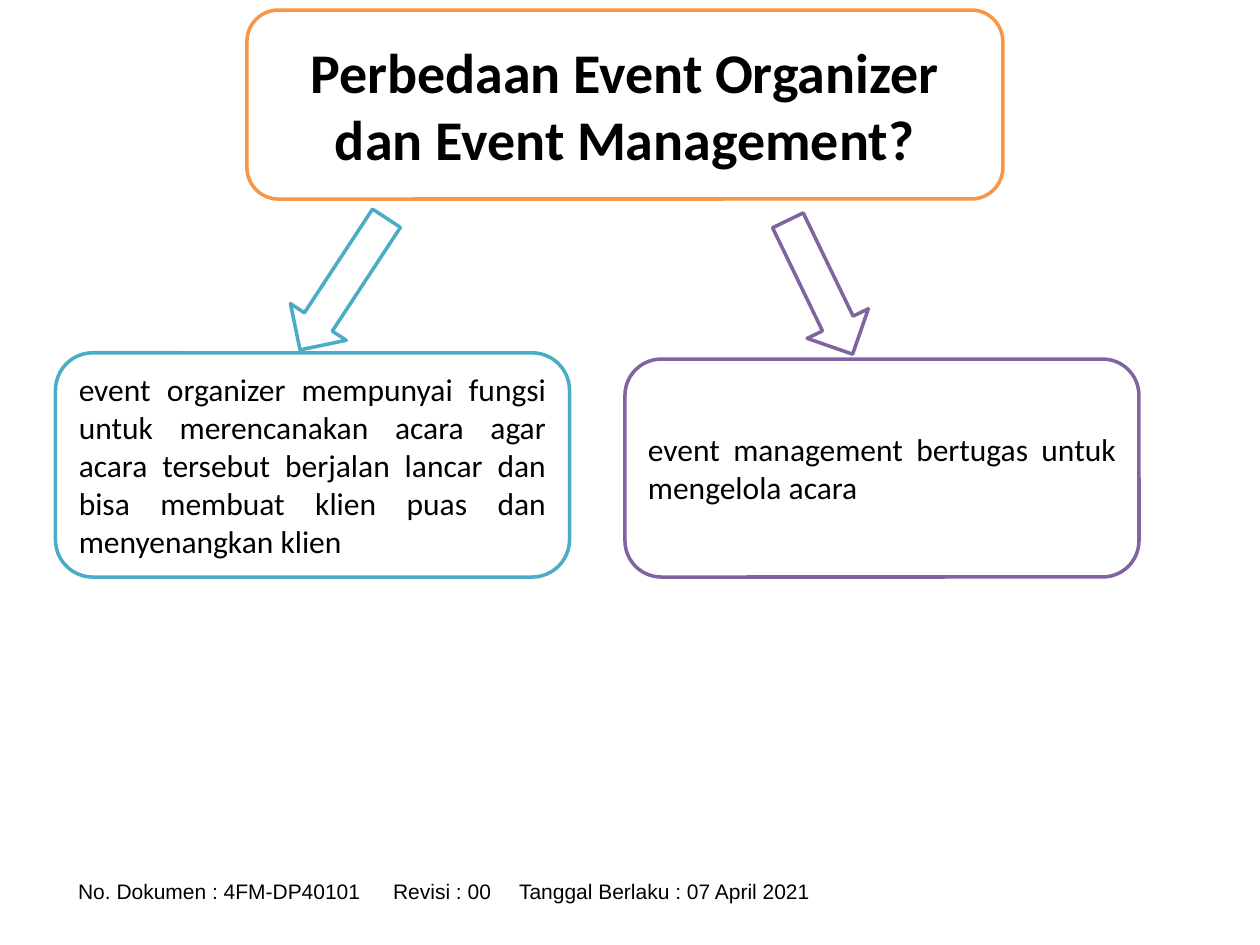
from dataclasses import dataclass

from lxml.etree import SubElement
from pptx import Presentation
from pptx.dml.color import RGBColor
from pptx.enum.shapes import MSO_SHAPE as Shape
from pptx.enum.text import MSO_ANCHOR as Anchor, PP_ALIGN as Align
from pptx.oxml.ns import qn
from pptx.util import Inches, Pt


@dataclass(frozen=True)
class Theme:
    """Colours, fonts and type sizes of the slide."""
    white: str = "FFFFFF"
    ink: str = "000000"
    orange: str = "F79646"
    teal: str = "4BACC6"
    purple: str = "8064A2"
    body_font: str = "Calibri"
    footer_font: str = "Arial"
    title_size: int = 32
    body_size: int = 18
    footer_size: int = 12
    line_width: int = 2


class SlideBuilder:
    """Draws styled elements on the current slide."""

    def __init__(self, page, theme):
        self.page = page
        self.theme = theme

    def style_text(self, box, text, size, align, font=None, bold=False):
        """Fill a box with one styled paragraph."""
        frame = box.text_frame
        frame.text = text
        frame.word_wrap = True
        frame.vertical_anchor = Anchor.MIDDLE
        para = frame.paragraphs[0]
        para.alignment = align
        for span in para.runs:
            span.font.name = font or self.theme.body_font
            span.font.size = Pt(size)
            span.font.bold = bold
            span.font.color.rgb = RGBColor.from_string(self.theme.ink)

    def outline(self, kind, place, color):
        """Add a white shape with a coloured outline."""
        shape = self.page.shapes.add_shape(kind, *map(Inches, place))
        shape.shadow.inherit = False
        shape.fill.solid()
        shape.fill.fore_color.rgb = RGBColor.from_string(self.theme.white)
        shape.line.color.rgb = RGBColor.from_string(color)
        shape.line.width = Pt(self.theme.line_width)
        return shape

    def title(self, text, place):
        """Set the title inside a rounded frame."""
        self.outline(Shape.ROUNDED_RECTANGLE, place, self.theme.orange)
        title = self.page.shapes.title
        title.left, title.top, title.width, title.height = map(Inches, place)
        frame = title.text_frame
        frame.margin_left = frame.margin_right = Inches(0.17)
        self.style_text(title, text, self.theme.title_size, Align.CENTER, bold=True)
        self.page.shapes.element.append(title.element)

    def arrow(self, place, rotation, color):
        """Add a rotated block arrow."""
        self.outline(Shape.DOWN_ARROW, place, color).rotation = rotation

    def card(self, text, place, color):
        """Add a rounded card with justified text."""
        card = self.outline(Shape.ROUNDED_RECTANGLE, place, color)
        self.style_text(card, text, self.theme.body_size, Align.JUSTIFY)

    def footer(self, parts, place, tabs):
        """Add a footer line whose parts sit on tab stops."""
        box = self.page.shapes.add_textbox(*map(Inches, place))
        box.text_frame.margin_left = Inches(0.42)
        para = box.text_frame.paragraphs[0]
        stops = SubElement(para._p.get_or_add_pPr(), qn("a:tabLst"))
        for position, align in tabs:
            SubElement(stops, qn("a:tab"), pos=str(Inches(position)), algn=align)
        self.style_text(box, "\t".join(parts), self.theme.footer_size, Align.LEFT,
                        self.theme.footer_font)


def main():
    """Build and save the slide."""
    deck = Presentation()
    deck.slide_width, deck.slide_height = Inches(10), Inches(7.5)
    theme = Theme()
    builder = SlideBuilder(deck.slides.add_slide(deck.slide_layouts[5]), theme)
    builder.footer(
        ("No. Dokumen : 4FM-DP40101", "Revisi : 00", "Tanggal Berlaku : 07 April 2021"),
        (0.2, 6.92, 9.45, 0.3), ((4.02, "ctr"), (8.43, "r")))
    builder.title("Perbedaan Event Organizer dan Event Management?", (1.96, 0.08, 6, 1.5))
    builder.arrow((2.46, 1.63, 0.53, 1.25), 33.3, theme.teal)
    builder.card(
        "event organizer mempunyai fungsi untuk merencanakan acara agar acara tersebut "
        "berjalan lancar dan bisa membuat klien puas dan menyenangkan klien",
        (0.44, 2.8, 4.08, 1.78), theme.teal)
    builder.arrow((6.24, 1.69, 0.54, 1.18), 334.2, theme.purple)
    builder.card("event management bertugas untuk mengelola acara",
                 (4.96, 2.85, 4.08, 1.73), theme.purple)
    deck.save("out.pptx")


if __name__ == "__main__":
    main()
